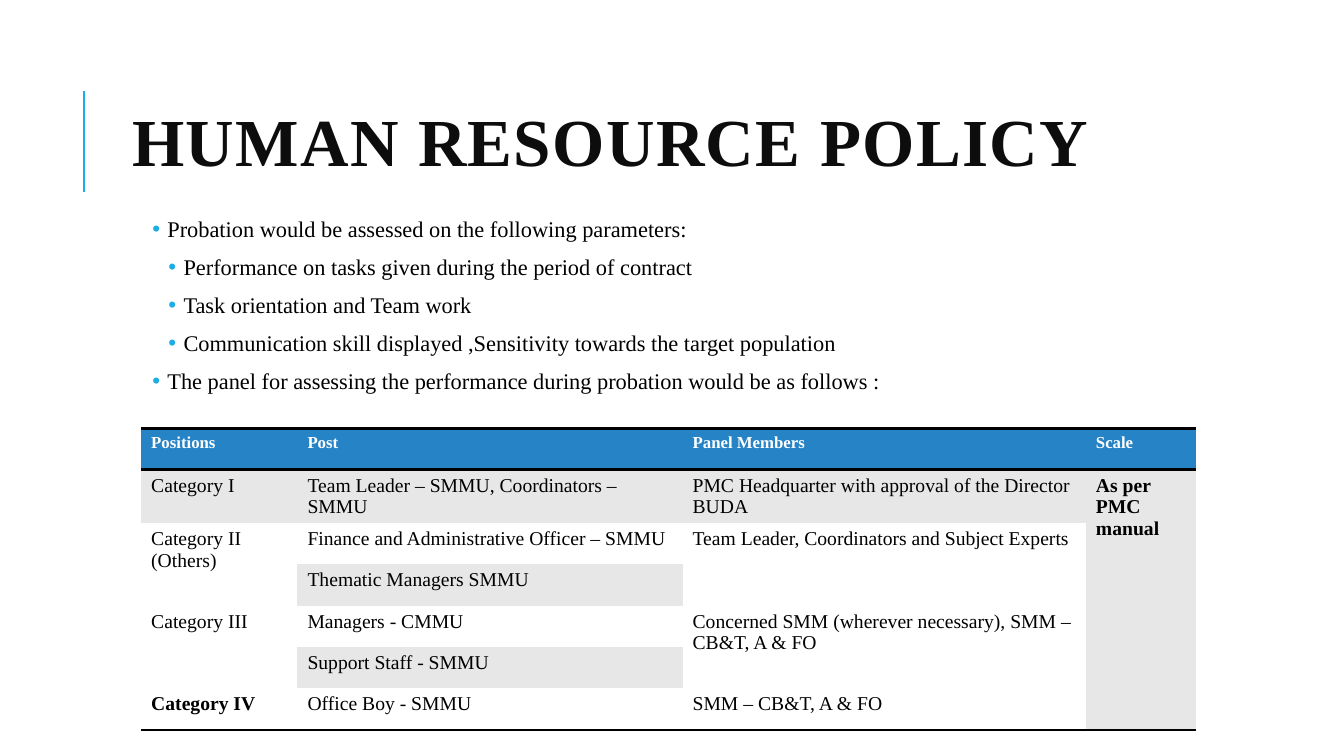
from lxml import etree
from pptx import Presentation
from pptx.dml.color import RGBColor
from pptx.enum.shapes import MSO_CONNECTOR
from pptx.enum.text import MSO_ANCHOR, MSO_AUTO_SIZE, PP_ALIGN
from pptx.oxml.ns import qn
from pptx.util import Inches, Pt

STRAIGHT = MSO_CONNECTOR.STRAIGHT
MIDDLE, TOP = MSO_ANCHOR.MIDDLE, MSO_ANCHOR.TOP
LEFT, JUSTIFY = PP_ALIGN.LEFT, PP_ALIGN.JUSTIFY
NO_AUTOFIT = MSO_AUTO_SIZE.NONE

FONT = "Times New Roman"
BLACK = RGBColor(0x00, 0x00, 0x00)
WHITE = RGBColor(0xFF, 0xFF, 0xFF)
TITLE_INK = RGBColor(0x0D, 0x0D, 0x0D)
ACCENT = RGBColor(0x1C, 0xAD, 0xE4)
HEADER_BLUE = RGBColor(0x26, 0x83, 0xC6)
BAND_GREY = RGBColor(0xE7, 0xE7, 0xE7)
PLAIN_TABLE_STYLE = "{2D5ABB26-0587-4C30-8999-92F81FD0307C}"

BULLETS = [
    (1, "Probation would be assessed on the following parameters: "),
    (2, "Performance on tasks given during the period of contract "),
    (2, "Task orientation and Team work "),
    (2, "Communication skill displayed ,Sensitivity towards the target population "),
    (1, "The panel for assessing the performance during probation would be as follows :"),
]
BULLET_INDENTS = {1: 0.49, 2: 0.65}

PANEL_ROWS = [
    ["Positions", "Post", "Panel Members", "Scale"],
    ["Category I", "Team Leader – SMMU, Coordinators – SMMU",
     "PMC Headquarter with approval of the Director BUDA", "As per PMC manual"],
    ["Category II (Others)", "Finance and Administrative Officer – SMMU",
     "Team Leader, Coordinators and Subject Experts", ""],
    ["", "Thematic Managers SMMU", "", ""],
    ["Category III", "Managers - CMMU",
     "Concerned SMM (wherever necessary), SMM – CB&T, A & FO", ""],
    ["", "Support Staff - SMMU", "", ""],
    ["Category IV", "Office Boy - SMMU", "SMM – CB&T, A & FO", ""],
]
COLUMN_WIDTHS = [1.55, 3.82, 4, 1.09]
ROW_HEIGHTS = [0.41, 0.53] + [0.41] * 5
MERGES = [(1, 3, 6, 3), (2, 0, 3, 0), (2, 2, 3, 2), (4, 0, 5, 0), (4, 2, 5, 2)]
BOLD_CELLS = {"As per PMC manual", "Category IV"}


def place(box, left, top, width, height):
    """Move and size a shape, in inches."""
    box.left, box.top = Inches(left), Inches(top)
    box.width, box.height = Inches(width), Inches(height)


def format_runs(para, size, color, bold=False):
    """Apply the slide font to every run of a paragraph."""
    for span in para.runs:
        span.font.name = FONT
        span.font.size = Pt(size)
        span.font.bold = bold
        span.font.color.rgb = color


def add_accent_line(page):
    """Draw the vertical rule beside the title."""
    rule = page.shapes.add_connector(
        STRAIGHT, Inches(0.83), Inches(1.9), Inches(0.83), Inches(0.9))
    rule.line.color.rgb = ACCENT
    rule.line.width = Pt(1.5)
    etree.SubElement(rule._element.spPr, qn("a:effectLst"))


def fill_title(box):
    """Write and format the slide title."""
    place(box, 1.21, 0.64, 10.63, 1.64)
    frame = box.text_frame
    frame.text = "HUMAN RESOURCE POLICY"
    frame.auto_size = NO_AUTOFIT
    frame.vertical_anchor = MIDDLE
    para = frame.paragraphs[0]
    para.alignment = LEFT
    para.line_spacing = 0.8
    format_runs(para, 48, TITLE_INK, True)
    for span in para.runs:
        span.font._element.set("spc", "100")


def set_bullet(para, indent):
    """Give a paragraph a coloured bullet with a hanging indent."""
    properties = para._p.get_or_add_pPr()
    properties.set("marL", str(Inches(indent)))
    properties.set("indent", str(Inches(-0.15)))
    color = etree.SubElement(properties, qn("a:buClr"))
    etree.SubElement(color, qn("a:srgbClr"), val=str(ACCENT))
    etree.SubElement(properties, qn("a:buFont"), typeface="Arial")
    etree.SubElement(properties, qn("a:buChar"), char="•")


def fill_body(box):
    """Write the bulleted list."""
    place(box, 1.12, 2.06, 10.63, 1.98)
    frame = box.text_frame
    frame.text = "\n".join(text for _, text in BULLETS)
    frame.auto_size = NO_AUTOFIT
    frame.vertical_anchor = TOP
    frame.margin_left = frame.margin_right = Inches(0.05)
    frame.margin_top = frame.margin_bottom = Inches(0.05)
    for para, (level, _) in zip(frame.paragraphs, BULLETS):
        para.level = level
        para.alignment = JUSTIFY
        para.line_spacing = 1.1
        para.space_before, para.space_after = Pt(2), Pt(4)
        set_bullet(para, BULLET_INDENTS[level])
        format_runs(para, 16, BLACK)


def add_border(cell, side):
    """Draw a black border on one side of a cell."""
    properties = cell._tc.get_or_add_tcPr()
    line = etree.Element(qn("a:" + side), w=str(Pt(2)))
    fill = etree.SubElement(line, qn("a:solidFill"))
    etree.SubElement(fill, qn("a:srgbClr"), val=str(BLACK))
    borders = properties.findall(qn("a:lnT"))
    properties.insert(len(borders), line)


def cell_fill(row, column):
    """Return the fill colour for a table position."""
    if row == 0:
        return HEADER_BLUE
    return BAND_GREY if row % 2 or column == 3 else WHITE


def format_cell(cell, row, column):
    """Write, fill and border one table cell."""
    text = PANEL_ROWS[row][column]
    cell.text = text
    cell.fill.solid()
    cell.fill.fore_color.rgb = cell_fill(row, column)
    if row == 0:
        format_runs(cell.text_frame.paragraphs[0], 12, WHITE, True)
        add_border(cell, "lnT")
    else:
        format_runs(cell.text_frame.paragraphs[0], 14, BLACK, text in BOLD_CELLS)
    last_row = row + cell.span_height - 1 if cell.is_merge_origin else row
    if last_row in (0, len(PANEL_ROWS) - 1):
        add_border(cell, "lnB")


def add_panel_table(page):
    """Add the table of assessment panels."""
    frame = page.shapes.add_table(
        len(PANEL_ROWS), len(COLUMN_WIDTHS), Inches(1.4), Inches(4.25),
        Inches(sum(COLUMN_WIDTHS)), Inches(sum(ROW_HEIGHTS)))
    table = frame.table
    table.horz_banding = False
    table._tbl.tblPr.find(qn("a:tableStyleId")).text = PLAIN_TABLE_STYLE
    for column, width in zip(table.columns, COLUMN_WIDTHS):
        column.width = Inches(width)
    for row, height in zip(table.rows, ROW_HEIGHTS):
        row.height = Inches(height)
    for top, left, bottom, right in MERGES:
        table.cell(top, left).merge(table.cell(bottom, right))
    for row in range(len(PANEL_ROWS)):
        for column in range(len(COLUMN_WIDTHS)):
            cell = table.cell(row, column)
            if not cell.is_spanned:
                format_cell(cell, row, column)
            elif row == len(PANEL_ROWS) - 1:
                add_border(cell, "lnB")


def main():
    """Build the slide and save the deck."""
    deck = Presentation()
    deck.slide_width, deck.slide_height = Inches(13.33), Inches(7.5)
    page = deck.slides.add_slide(deck.slide_layouts[1])
    add_accent_line(page)
    fill_title(page.shapes.title)
    fill_body(page.placeholders[1])
    add_panel_table(page)
    deck.save("out.pptx")


if __name__ == "__main__":
    main()
